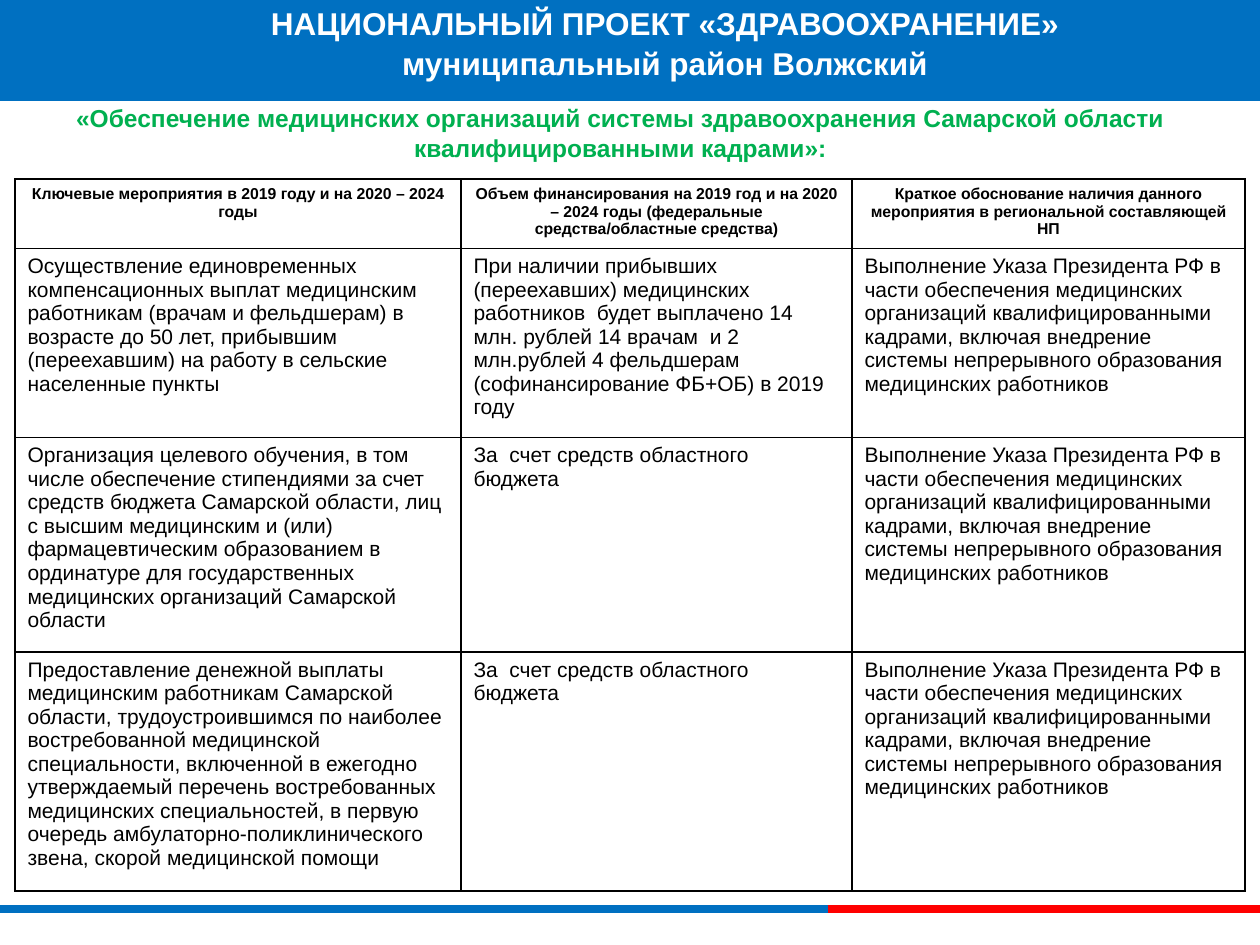
import pptx
import pptx.util
import pptx.dml.color
import pptx.enum.shapes
import pptx.enum.text
import pptx.oxml
import pptx.oxml.ns

EMU_PER_PX = 914400 / 126
BLUE, RED, GREEN, BLACK, WHITE = "0070C1", "FF0000", "00B050", "000000", "FFFFFF"


def px(length):
    return pptx.util.Emu(round(length * EMU_PER_PX))


def color(hex_code):
    return pptx.dml.color.RGBColor.from_string(hex_code)


class SlideBuilder:
    font_name = "Arial"

    def __init__(self, slide):
        self.slide = slide

    def style(self, paragraph, size, hex_code, bold=False, centered=False):
        font = paragraph.font
        font.name = self.font_name
        font.size = pptx.util.Pt(size)
        font.bold = bold
        font.color.rgb = color(hex_code)
        align = pptx.enum.text.PP_ALIGN
        paragraph.alignment = align.CENTER if centered else align.LEFT

    def band(self, left, top, width, height, fill):
        band = self.slide.shapes.add_shape(
            pptx.enum.shapes.MSO_SHAPE.RECTANGLE,
            px(left), px(top), px(width), px(height))
        band.shadow.inherit = False
        band.fill.solid()
        band.fill.fore_color.rgb = color(fill)
        band.line.fill.background()

    def rule(self, start, end, y, hex_code, weight):
        rule = self.slide.shapes.add_connector(
            pptx.enum.shapes.MSO_CONNECTOR.STRAIGHT, px(start), px(y), px(end), px(y))
        rule.line.color.rgb = color(hex_code)
        rule.line.width = pptx.util.Pt(weight)
        properties = rule._element.spPr
        properties.append(properties.makeelement(pptx.oxml.ns.qn("a:effectLst"), {}))

    def text(self, left, top, width, height, words, size, hex_code, inset_top, spacing):
        frame = self.slide.shapes.add_textbox(
            px(left), px(top), px(width), px(height)).text_frame
        frame.word_wrap = True
        frame.margin_left = frame.margin_right = frame.margin_bottom = px(6)
        frame.margin_top = px(inset_top)
        frame.text = words
        for paragraph in frame.paragraphs:
            paragraph.line_spacing = spacing
            self.style(paragraph, size, hex_code, bold=True, centered=True)

    def borders(self, cell, hex_code, weight):
        properties = cell._tc.get_or_add_tcPr()
        for position, side in enumerate(("lnL", "lnR", "lnT", "lnB")):
            properties.insert(position, pptx.oxml.parse_xml(
                f'<a:{side} {pptx.oxml.ns.nsdecls("a")} w="{pptx.util.Pt(weight)}">'
                f'<a:solidFill><a:srgbClr val="{hex_code}"/></a:solidFill></a:{side}>'))

    def table(self, left, top, widths, heights, rows):
        table = self.slide.shapes.add_table(
            len(heights), len(widths), px(left), px(top),
            px(sum(widths)), px(sum(heights))).table
        table.horz_banding = False
        for column, width in zip(table.columns, widths):
            column.width = px(width)
        for row_index, (row, height, texts) in enumerate(zip(table.rows, heights, rows)):
            row.height = px(height)
            is_header = row_index == 0
            for cell, words in zip(row.cells, texts):
                cell.text = words
                cell.fill.solid()
                cell.fill.fore_color.rgb = color(WHITE)
                self.borders(cell, BLACK, 1)
                self.style(cell.text_frame.paragraphs[0], 9 if is_header else 12,
                           BLACK, bold=is_header, centered=is_header)


DECREE = ("Выполнение Указа Президента РФ в части обеспечения медицинских организаций "
          "квалифицированными кадрами, включая внедрение системы непрерывного "
          "образования медицинских работников")
REGIONAL_BUDGET = "За  счет средств областного бюджета"
ACTIVITIES = [
    ("Ключевые мероприятия в 2019 году и на 2020 – 2024 годы",
     "Объем финансирования на 2019 год и на 2020 – 2024 годы "
     "(федеральные средства/областные средства)",
     "Краткое обоснование наличия данного мероприятия в региональной составляющей НП"),
    ("Осуществление единовременных компенсационных выплат медицинским работникам "
     "(врачам и фельдшерам) в возрасте до 50 лет, прибывшим (переехавшим) на работу "
     "в сельские населенные пункты",
     "При наличии прибывших (переехавших) медицинских работников  будет выплачено "
     "14 млн. рублей 14 врачам  и 2 млн.рублей 4 фельдшерам "
     "(софинансирование ФБ+ОБ) в 2019 году",
     DECREE),
    ("Организация целевого обучения, в том числе обеспечение стипендиями за счет "
     "средств бюджета Самарской области, лиц с высшим медицинским и (или) "
     "фармацевтическим образованием в ординатуре для государственных медицинских "
     "организаций Самарской области",
     REGIONAL_BUDGET, DECREE),
    ("Предоставление денежной выплаты медицинским работникам Самарской области, "
     "трудоустроившимся по наиболее востребованной медицинской специальности, "
     "включенной в ежегодно утверждаемый перечень востребованных медицинских "
     "специальностей, в первую очередь амбулаторно-поликлинического звена, "
     "скорой медицинской помощи",
     REGIONAL_BUDGET, DECREE),
]


def main():
    presentation = pptx.Presentation()
    presentation.slide_width, presentation.slide_height = px(1260), px(945)
    builder = SlideBuilder(presentation.slides.add_slide(presentation.slide_layouts[6]))

    # Footer stripe and header band
    builder.rule(0, 828, 909, BLUE, 5)
    builder.rule(828, 1260, 909, RED, 5)
    builder.band(0, -4, 1260, 105, BLUE)

    # Subtitle and title
    builder.text(15, 96, 1211, 764,
                 "«Обеспечение медицинских организаций системы здравоохранения "
                 "Самарской области квалифицированными кадрами»:", 14, GREEN, 6, 1.03)
    builder.text(164, 0, 1002, 116,
                 "НАЦИОНАЛЬНЫЙ ПРОЕКТ «ЗДРАВООХРАНЕНИЕ»\vмуниципальный район Волжский",
                 18, WHITE, 2, 1.05)

    # Activities, funding and rationale
    builder.table(15, 179, [446, 391, 393], [65, 155, 176, 197], ACTIVITIES)

    presentation.save("out.pptx")


if __name__ == "__main__":
    main()
